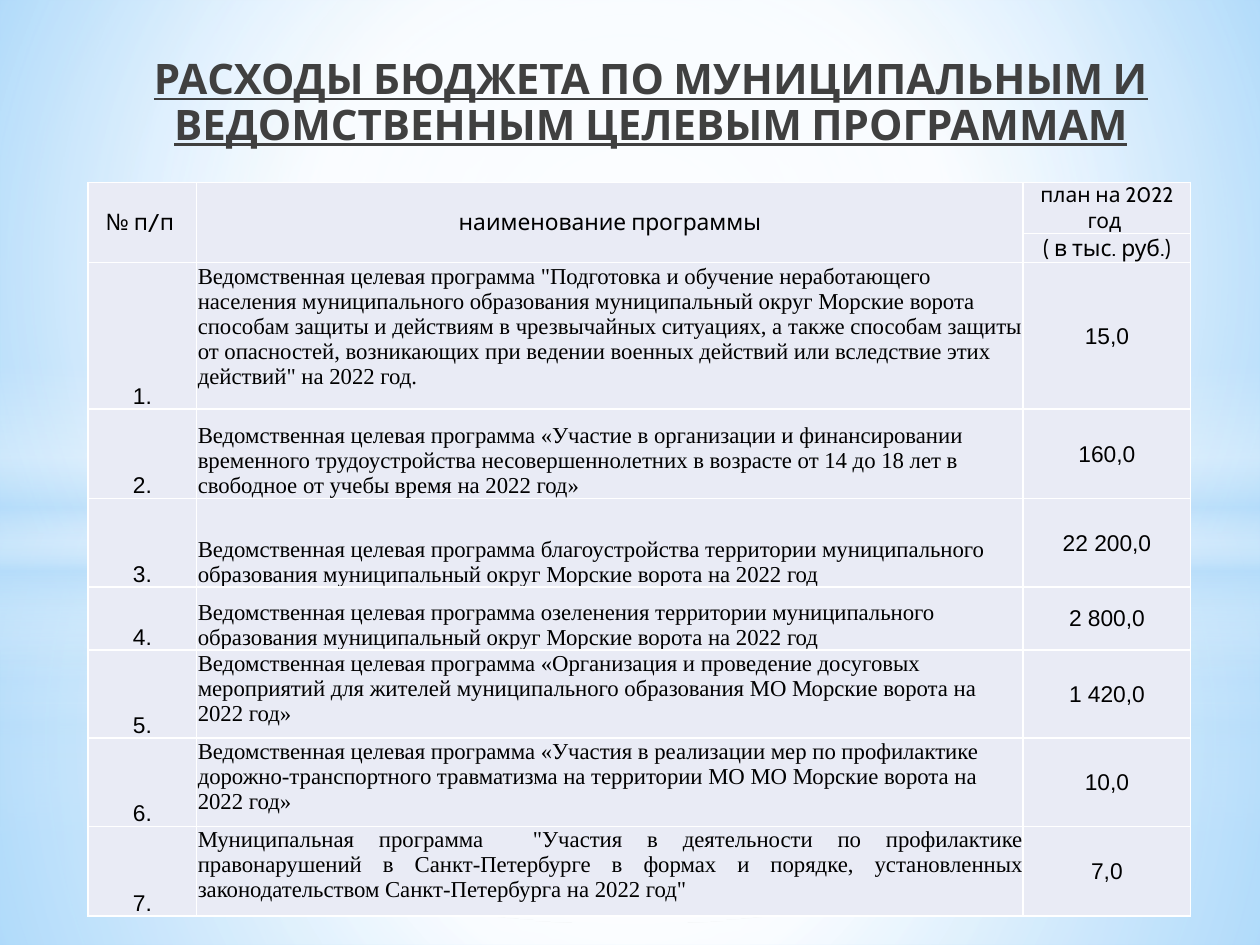
from lxml.etree import SubElement, fromstring
from pptx import Presentation
from pptx.dml.color import RGBColor
from pptx.enum.shapes import MSO_SHAPE as Shape
from pptx.enum.text import MSO_ANCHOR as Anchor, PP_ALIGN as Align
from pptx.oxml.ns import qn
from pptx.util import Inches, Pt

WIDE, HIGH = Inches(10), Inches(7.5)
HUES = {
    "ink": "000000", "title": "404040", "cell": "E9EBF5", "white": "FFFFFF",
    "sky": "B4DCFA", "pale": "9ED5FF", "deep": "5BB9FF",
}
NS = "http://schemas.openxmlformats.org/drawingml/2006/main"
MID = (50, 50, 50, 50)
COLS = (0.86, 6.56, 1.33)
ROWS = (0.35, 0.23, 1.16, 0.71, 0.7, 0.5, 0.7, 0.7, 0.71)
TITLE = "РАСХОДЫ БЮДЖЕТА ПО МУНИЦИПАЛЬНЫМ И ВЕДОМСТВЕННЫМ ЦЕЛЕВЫМ ПРОГРАММАМ"
HEADS = (
    (0, 0, "№ п/п ", 13),
    (0, 1, "наименование программы", 13),
    (0, 2, "план на 2022 год ", 12),
    (1, 2, "( в тыс. руб.)", 13),
)
PLANS = (
    ("Ведомственная целевая программа \"Подготовка и обучение неработающего "
     "населения муниципального образования муниципальный округ Морские ворота "
     "способам защиты и действиям в чрезвычайных ситуациях, а также способам "
     "защиты от опасностей, возникающих при ведении военных действий или "
     "вследствие этих действий\" на 2022 год.", "15,0", Anchor.TOP, Align.LEFT),
    ("Ведомственная целевая программа «Участие в организации и финансировании "
     "временного трудоустройства несовершеннолетних в возрасте от 14 до 18 лет "
     "в свободное от учебы время на 2022 год»", "160,0", Anchor.BOTTOM, Align.LEFT),
    ("Ведомственная целевая программа благоустройства территории муниципального "
     "образования муниципальный округ Морские ворота на 2022 год",
     "22 200,0", Anchor.BOTTOM, Align.LEFT),
    ("Ведомственная целевая программа озеленения территории муниципального "
     "образования муниципальный округ Морские ворота на 2022 год",
     "2 800,0", Anchor.BOTTOM, Align.LEFT),
    ("Ведомственная целевая программа «Организация и проведение досуговых "
     "мероприятий для жителей муниципального образования МО Морские ворота на "
     "2022 год»", "1 420,0", Anchor.TOP, Align.LEFT),
    ("Ведомственная целевая программа «Участия в реализации мер по профилактике "
     "дорожно-транспортного травматизма на территории МО МО Морские ворота на "
     "2022 год»", "10,0", Anchor.TOP, Align.LEFT),
    ("Муниципальная программа  \"Участия в деятельности по профилактике "
     "правонарушений в Санкт-Петербурге в формах и порядке, установленных "
     "законодательством Санкт-Петербурга на 2022 год\"",
     "7,0", Anchor.TOP, Align.JUSTIFY),
)


def scale(box):
    """Turn shares of the slide into lengths."""
    return [int(part * side) for part, side in zip(box, (WIDE, HIGH) * 2)]


def blend(item, fill, stops, focus=None):
    """Fill with (place, hue, opacity) stops, round a focus or top to bottom."""
    fill.solid()
    old = next(item.iter(qn("a:solidFill")))
    grad = fromstring(f'<a:gradFill xmlns:a="{NS}" rotWithShape="1"><a:gsLst/></a:gradFill>')
    for place, hue, clear in stops:
        stop = SubElement(grad[0], qn("a:gs"), pos=str(place * 1000))
        tone = SubElement(stop, qn("a:srgbClr"), val=HUES[hue])
        SubElement(tone, qn("a:alpha"), val=str(clear * 1000))
    if focus:
        way = SubElement(grad, qn("a:path"), path="circle")
        sides = {key: str(part * 1000) for key, part in zip("ltrb", focus)}
        SubElement(way, qn("a:fillToRect"), **sides)
    else:
        SubElement(grad, qn("a:lin"), ang="5400000", scaled="0")
    old.getparent().replace(old, grad)


def glow(slide, kind, box, stops, focus=None):
    shape = slide.shapes.add_shape(kind, *scale(box))
    shape.shadow.inherit = False
    shape.line.fill.background()
    blend(shape._element, shape.fill, stops, focus)


def layer(slide, edge, band, step):
    """Sky above the edge, ground below it, a streak and a central light."""
    glow(slide, Shape.RECTANGLE, (0, edge, 1, 1 - edge),
         ((0, "white", 91 + step), (37, "white", 76 + step), (100, "sky", 79 + step)), MID)
    glow(slide, Shape.RECTANGLE, (0, 0, 1, edge),
         ((0, "white", 89 + step), (48, "white", 62 + step), (100, "sky", 79 + step)), MID)
    glow(slide, Shape.RECTANGLE, (0, band, 1, 1 / 3),
         ((0, "white", 0), (29, "white", 30), (45, "sky", 40),
          (55, "white", 26), (65, "sky", 60), (100, "white", 0)))
    glow(slide, Shape.OVAL, (0, 0.233, 1, 0.744),
         ((0, "white", 100), (56 - 2 * step, "white", 0)), MID)


def scene(slide):
    blend(slide._element, slide.background.fill,
          ((0, "pale", 100), (60, "white", 100), (100, "deep", 100)), (20, 10, 20, 60))
    layer(slide, 0.744, 0.549, 0)
    layer(slide, 0.564, 0.387, 1)


def style(run, face, size, hue):
    run.font.name, run.font.size = face, Pt(size)
    run.font.color.rgb = RGBColor.from_string(HUES[hue])


def head(slide, box):
    title = slide.shapes.title
    title.left, title.top, title.width, title.height = scale(box)
    frame = title.text_frame
    frame.text = TITLE
    frame.word_wrap = True
    frame.vertical_anchor = Anchor.MIDDLE
    line = frame.paragraphs[0]
    line.alignment = Align.CENTER
    line.line_spacing = 0.9
    run = line.runs[0]
    style(run, "Cabin", 24, "title")
    run.font.bold = run.font.underline = True
    tree = title._element.getparent()
    tree.append(title._element)


def write(cell, text, face, size=13, anchor=Anchor.MIDDLE, align=Align.CENTER, inset=0.01):
    cell.text_frame.text = text
    cell.vertical_anchor = anchor
    cell.margin_left = cell.margin_right = cell.margin_top = Inches(inset)
    cell.margin_bottom = 0
    line = cell.text_frame.paragraphs[0]
    line.alignment = align
    style(line.runs[0], face, size, "ink")


def frame(cell):
    """Give a cell its fill and white borders."""
    cell.fill.solid()
    cell.fill.fore_color.rgb = RGBColor.from_string(HUES["cell"])
    props = cell._tc.get_or_add_tcPr()
    for spot, side in enumerate("LRTB"):
        props.insert(spot, fromstring(
            f'<a:ln{side} xmlns:a="{NS}" w="12700"><a:solidFill>'
            f'<a:srgbClr val="{HUES["white"]}"/></a:solidFill></a:ln{side}>'))


def grid(slide, box):
    area = scale(box)
    table = slide.shapes.add_table(len(ROWS), len(COLS), *area).table
    table.first_row = table.horz_banding = False
    for col, part in zip(table.columns, COLS):
        col.width = int(area[2] * part / sum(COLS))
    for row, part in zip(table.rows, ROWS):
        row.height = int(area[3] * part / sum(ROWS))
    for cell in table.iter_cells():
        frame(cell)
    for col in (0, 1):
        table.cell(0, col).merge(table.cell(1, col))
    for row, col, text, size in HEADS:
        write(table.cell(row, col), text, "Cabin", size, inset=0)
    for num, (name, cost, anchor, align) in enumerate(PLANS, 1):
        row = num + 1
        write(table.cell(row, 0), f"{num}.", "Arial", anchor=Anchor.BOTTOM)
        write(table.cell(row, 1), name, "Times New Roman", anchor=anchor, align=align)
        write(table.cell(row, 2), cost, "Arial")


def main():
    deck = Presentation()
    deck.slide_width, deck.slide_height = WIDE, HIGH
    slide = deck.slides.add_slide(deck.slide_layouts[5])
    scene(slide)
    head(slide, (0.034, 0.05, 0.965, 0.12))
    grid(slide, (0.07, 0.193, 0.875, 0.769))
    deck.save("out.pptx")


if __name__ == "__main__":
    main()
